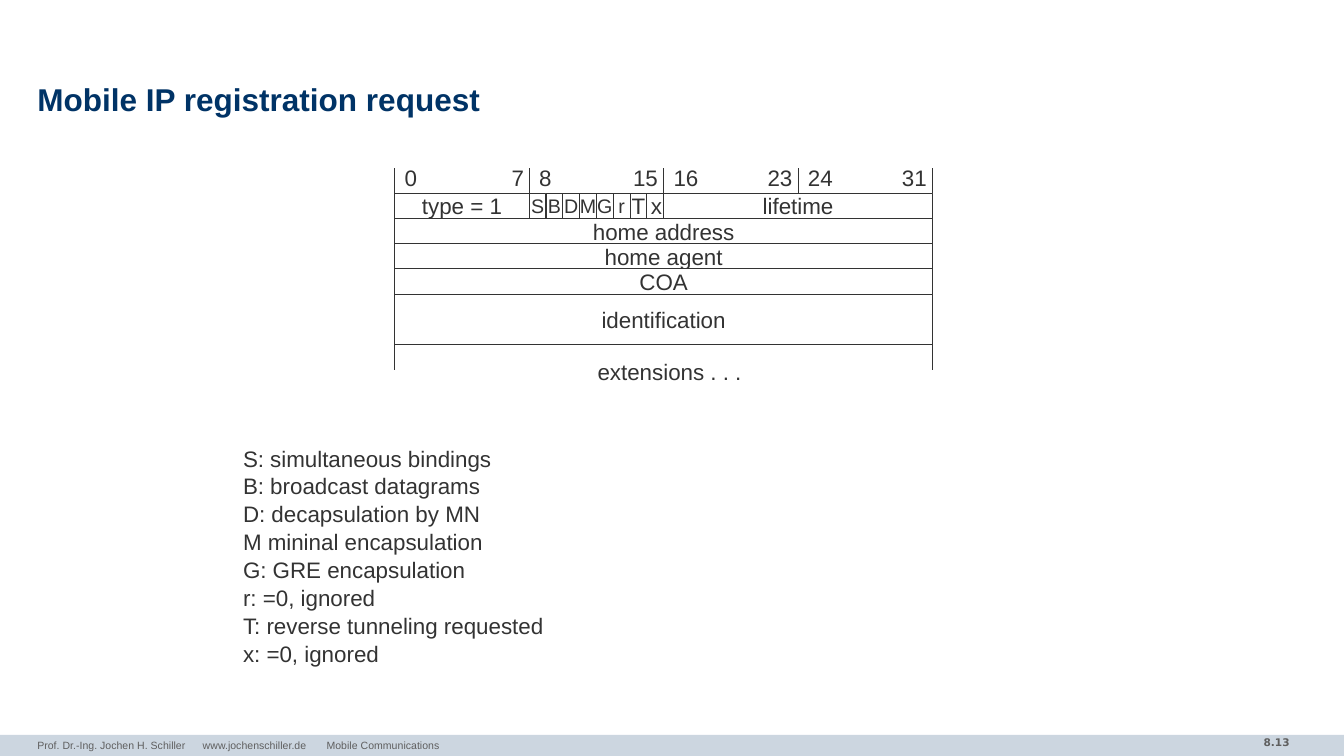
"""Build the slide on the Mobile IP registration request."""
from dataclasses import dataclass

from lxml.etree import SubElement
from pptx import Presentation
from pptx.dml.color import RGBColor
from pptx.enum.shapes import MSO_CONNECTOR, MSO_SHAPE
from pptx.enum.text import MSO_ANCHOR, MSO_AUTO_SIZE, PP_ALIGN
from pptx.oxml.ns import qn
from pptx.util import Cm, Pt


@dataclass(frozen=True)
class Theme:
    """Colours, fonts and type sizes of the slide."""
    ink: RGBColor = RGBColor.from_string("333333")
    navy: RGBColor = RGBColor.from_string("003366")
    grey: RGBColor = RGBColor.from_string("5F5F5F")
    band: RGBColor = RGBColor.from_string("CCD6E0")
    white: RGBColor = RGBColor.from_string("FFFFFF")
    font: str = "Arial"
    digits: str = "DejaVu Sans"
    head: float = 22.5
    text: float = 16
    flag: float = 14
    small: float = 7.5
    rule: float = 0.75


THEME = Theme()
ROWS = [("home address", 1, 1), ("home agent", 2, 1), ("COA", 3, 1), ("identification", 4, 2)]
LEGEND = [
    "S: simultaneous bindings",
    "B: broadcast datagrams",
    "D: decapsulation by MN",
    "M mininal encapsulation",
    "G: GRE encapsulation",
    "r: =0, ignored",
    "T: reverse tunneling requested",
    "x: =0, ignored",
]
CREDITS = ["Prof. Dr.-Ing. Jochen H. Schiller", "www.jochenschiller.de", "Mobile Communications"]
STOPS = [4.17, 7.29]


def write(para, text, size, color=THEME.ink, font=THEME.font, bold=False):
    """Add one formatted run to a paragraph."""
    run = para.add_run()
    run.text = text
    run.font.size = Pt(size)
    run.font.name = font
    run.font.bold = bold
    run.font.color.rgb = color


def place(shape, box):
    """Move a shape to a box given in centimetres."""
    shape.left, shape.top, shape.width, shape.height = map(Cm, box)


def inset(frame, side, end):
    """Set the side and end margins of a text frame."""
    frame.margin_left = frame.margin_right = Cm(side)
    frame.margin_top = frame.margin_bottom = Cm(end)


def label(slide, box, wrap=False):
    """Add a text box and return its first paragraph."""
    frame = slide.shapes.add_textbox(*map(Cm, box)).text_frame
    frame.word_wrap = wrap
    return frame.paragraphs[0]


def block(slide, box, fill, line=None):
    """Add a flat filled rectangle."""
    shape = slide.shapes.add_shape(MSO_SHAPE.RECTANGLE, *map(Cm, box))
    shape.shadow.inherit = False
    shape.fill.solid()
    shape.fill.fore_color.rgb = fill
    if line is None:
        shape.line.fill.background()
    else:
        shape.line.color.rgb = line
        shape.line.width = Pt(THEME.rule)
    return shape


def field(slide, box, text, size=THEME.text):
    """Add one outlined header field with centred text."""
    shape = block(slide, box, THEME.white, THEME.ink)
    frame = shape.text_frame
    frame.word_wrap = False
    frame.vertical_anchor = MSO_ANCHOR.MIDDLE
    inset(frame, 0, 0)
    para = frame.paragraphs[0]
    para.alignment = PP_ALIGN.CENTER
    write(para, text, size)
    return shape


def upright(slide, x, low, high):
    """Add a thin upright line."""
    line = slide.shapes.add_connector(MSO_CONNECTOR.STRAIGHT, Cm(x), Cm(low), Cm(x), Cm(high))
    line.line.color.rgb = THEME.ink
    line.line.width = Pt(THEME.rule)
    SubElement(line._element.spPr, qn("a:effectLst"))
    return line


def heading(slide, box):
    """Fill the title placeholder."""
    title = slide.shapes.title
    place(title, box)
    frame = title.text_frame
    frame.auto_size = MSO_AUTO_SIZE.NONE
    frame.vertical_anchor = MSO_ANCHOR.MIDDLE
    inset(frame, 0, 0)
    para = frame.paragraphs[0]
    para.alignment = PP_ALIGN.LEFT
    para.line_spacing = 0.85
    write(para, "Mobile IP registration request", THEME.head, THEME.navy, bold=True)


def packet(slide, box):
    """Draw the packet header with its bit scale and fields."""
    left, top, width, height = box
    bit, row = width / 32, height / 6
    end = left + width

    def cell(first, count, line=0, rows=1):
        """Return the box of a run of bits."""
        return left + first * bit, top + line * row, count * bit, rows * row

    field(slide, cell(0, 8), "type = 1")
    for i, name in enumerate("SBDMGr"):
        field(slide, cell(8 + i, 1), name, THEME.flag)
    pair = field(slide, cell(14, 2), "T x")
    life = field(slide, cell(16, 16), "lifetime")
    for text, line, rows in ROWS:
        field(slide, cell(0, 32, line, rows), text)

    split = upright(slide, left + 15 * bit, top + row, top)
    split.begin_connect(pair, 2)
    split.end_connect(pair, 0)
    for first in range(0, 33, 8):
        tick = upright(slide, left + first * bit, top, top - row)
        if first == 24:
            tick.begin_connect(life, 0)
    for x in (left, end):
        upright(slide, x, top + height, top + height + row)

    for first in range(0, 32, 8):
        x = left + first * bit
        for number, close in ((first, False), (first + 7, True)):
            wide = 0.81 if number < 10 else 1.14
            start = x + 8 * bit + 0.12 - wide if close else x
            write(label(slide, (start, top - 0.86, wide, 0.94)), str(number), THEME.text)
    more = (left + 4.86, top + height + 0.21, 4.32, 0.94)
    write(label(slide, more), "extensions . . .", THEME.text)


def legend(slide, box):
    """Fill the body placeholder with the meaning of the flags."""
    body = slide.placeholders[1]
    place(body, box)
    frame = body.text_frame
    frame.auto_size = MSO_AUTO_SIZE.NONE
    frame.word_wrap = False
    for i, text in enumerate(LEGEND):
        para = frame.add_paragraph() if i else frame.paragraphs[0]
        para.space_before = Pt(0)
        para.line_spacing = 1.04
        props = para._p.get_or_add_pPr()
        props.set("marL", "0")
        props.set("indent", "0")
        SubElement(props, qn("a:buNone"))
        write(para, text, THEME.text)


def footer(slide, box):
    """Draw the bottom band with credits and page number."""
    left, top, width, height = box
    block(slide, box, THEME.band)
    page = label(slide, (left + width - 5.67, top - 0.1, 4.55, 0.66), True)
    page.alignment = PP_ALIGN.RIGHT
    write(page, "8.13", THEME.small, THEME.grey, THEME.digits, True)
    para = label(slide, (left + 0.94, top - 0.02, 22.15, 0.56), True)
    inset(slide.shapes[-1].text_frame, 0, 0.13)
    tabs = SubElement(para._p.get_or_add_pPr(), qn("a:tabLst"))
    for stop in STOPS:
        SubElement(tabs, qn("a:tab"), pos=str(Cm(stop)), algn="l")
    for i, text in enumerate(CREDITS):
        write(para, "\t" + text if i else text, THEME.small, THEME.grey)


def main():
    """Build and save the slide."""
    deck = Presentation()
    deck.slide_width, deck.slide_height = Cm(33.87), Cm(19.05)
    slide = deck.slides.add_slide(deck.slide_layouts[1])
    footer(slide, (0, 18.52, 33.87, 0.53))
    heading(slide, (0.94, 1.98, 32, 1.19))
    packet(slide, (9.95, 4.87, 13.55, 3.81))
    legend(slide, (5.87, 11.05, 8.18, 5.69))
    deck.save("out.pptx")


if __name__ == "__main__":
    main()
